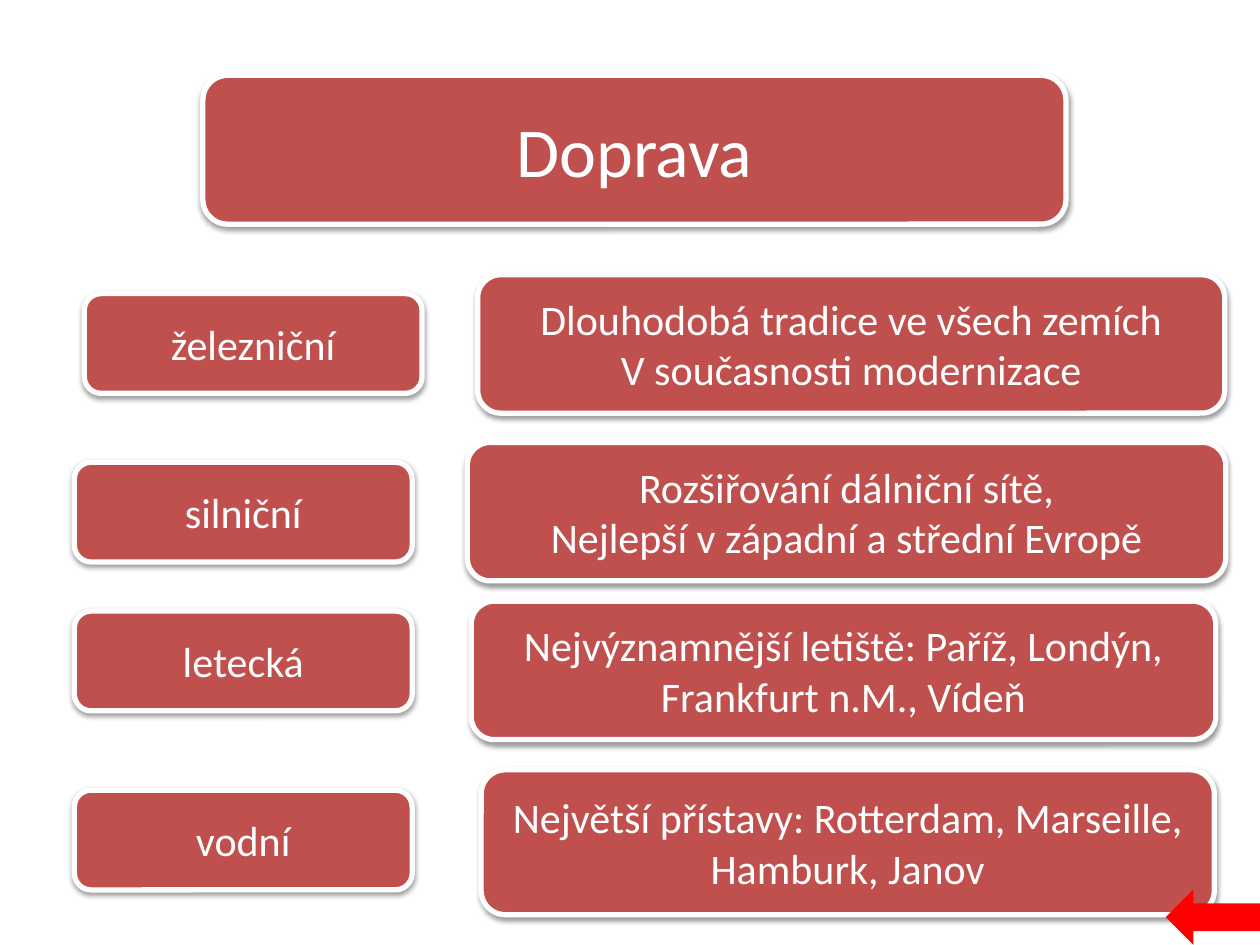
from dataclasses import dataclass

from lxml import etree
from pptx import Presentation
from pptx.dml.color import RGBColor
from pptx.enum.shapes import MSO_SHAPE
from pptx.enum.text import MSO_ANCHOR, PP_ALIGN
from pptx.oxml.ns import qn
from pptx.util import Cm, Pt

ROUNDED = MSO_SHAPE.ROUNDED_RECTANGLE
LEFT_ARROW = MSO_SHAPE.LEFT_ARROW
MIDDLE = MSO_ANCHOR.MIDDLE
CENTER = PP_ALIGN.CENTER

FONT = "Calibri"
COLORS = {"box": "C0504D", "white": "FFFFFF", "arrow": "FF0000", "shadow": "000000"}
LABEL_W, LABEL_H = 6.81, 2.01
DETAIL_H = 2.79


@dataclass
class Box:
    """A rounded box: place in centimetres, one text line per paragraph."""
    x: float
    y: float
    w: float
    h: float
    lines: tuple[str, ...]
    size: int = 24


def rgb(name: str) -> RGBColor:
    return RGBColor.from_string(COLORS[name])


def add_shadow(shape) -> None:
    """Give the shape a soft shadow that falls straight down."""
    effects = shape._element.spPr.find(qn("a:effectLst"))
    shadow = etree.SubElement(effects, qn("a:outerShdw"), blurRad=str(Pt(3.1)),
                              dist=str(Pt(1.6)), dir="5400000", rotWithShape="0")
    color = etree.SubElement(shadow, qn("a:srgbClr"), val=COLORS["shadow"])
    etree.SubElement(color, qn("a:alpha"), val="38000")


def add_filled(slide, kind, x: float, y: float, w: float, h: float, color: str):
    s = slide.shapes.add_shape(kind, Cm(x), Cm(y), Cm(w), Cm(h))
    s.shadow.inherit = False
    s.fill.solid()
    s.fill.fore_color.rgb = rgb(color)
    return s


def add_box(slide, box: Box) -> None:
    s = add_filled(slide, ROUNDED, box.x, box.y, box.w, box.h, "box")
    s.line.color.rgb = rgb("white")
    s.line.width = Pt(3)
    add_shadow(s)
    tf = s.text_frame
    tf.word_wrap = True
    tf.vertical_anchor = MIDDLE
    for i, line in enumerate(box.lines):
        p = tf.add_paragraph() if i else tf.paragraphs[0]
        p.alignment = CENTER
        r = p.add_run()
        r.text = line
        r.font.name = FONT
        r.font.size = Pt(box.size)
        r.font.color.rgb = rgb("white")


TITLE = Box(4.09, 1.52, 17.4, 3, ("Doprava",), 40)

# Kinds of transport, left column
LABELS = [
    Box(x, y, LABEL_W, LABEL_H, (text,))
    for x, y, text in [
        (1.7, 5.92, "železniční"),
        (1.5, 9.32, "silniční"),
        (1.5, 12.32, "letecká"),
        (1.5, 15.93, "vodní"),
    ]
]

# Facts about each kind, right column
DETAILS = [
    Box(9.63, 5.54, 15.06, DETAIL_H,
        ("Dlouhodobá tradice ve všech zemích", "V současnosti modernizace")),
    Box(9.42, 8.92, 15.29, DETAIL_H,
        ("Rozšiřování dálniční sítě,", "Nejlepší v západní a střední Evropě")),
    Box(9.5, 12.12, 15.01, DETAIL_H,
        ("Nejvýznamnější letiště: Paříž, Londýn,", "Frankfurt n.M., Vídeň")),
    Box(9.7, 15.52, 14.78, 2.92,
        ("Největší přístavy: Rotterdam, Marseille, Hamburk, Janov",)),
]


def main() -> None:
    prs = Presentation()
    prs.slide_width, prs.slide_height = Cm(25.4), Cm(19.05)
    slide = prs.slides.add_slide(prs.slide_layouts[6])

    for box in [TITLE, *LABELS, *DETAILS]:
        add_box(slide, box)

    # Back arrow at the lower right corner
    arrow = add_filled(slide, LEFT_ARROW, 23.5, 17.93, 2.79, 1.12, "arrow")
    arrow.line.fill.background()

    prs.save("out.pptx")


if __name__ == "__main__":
    main()
